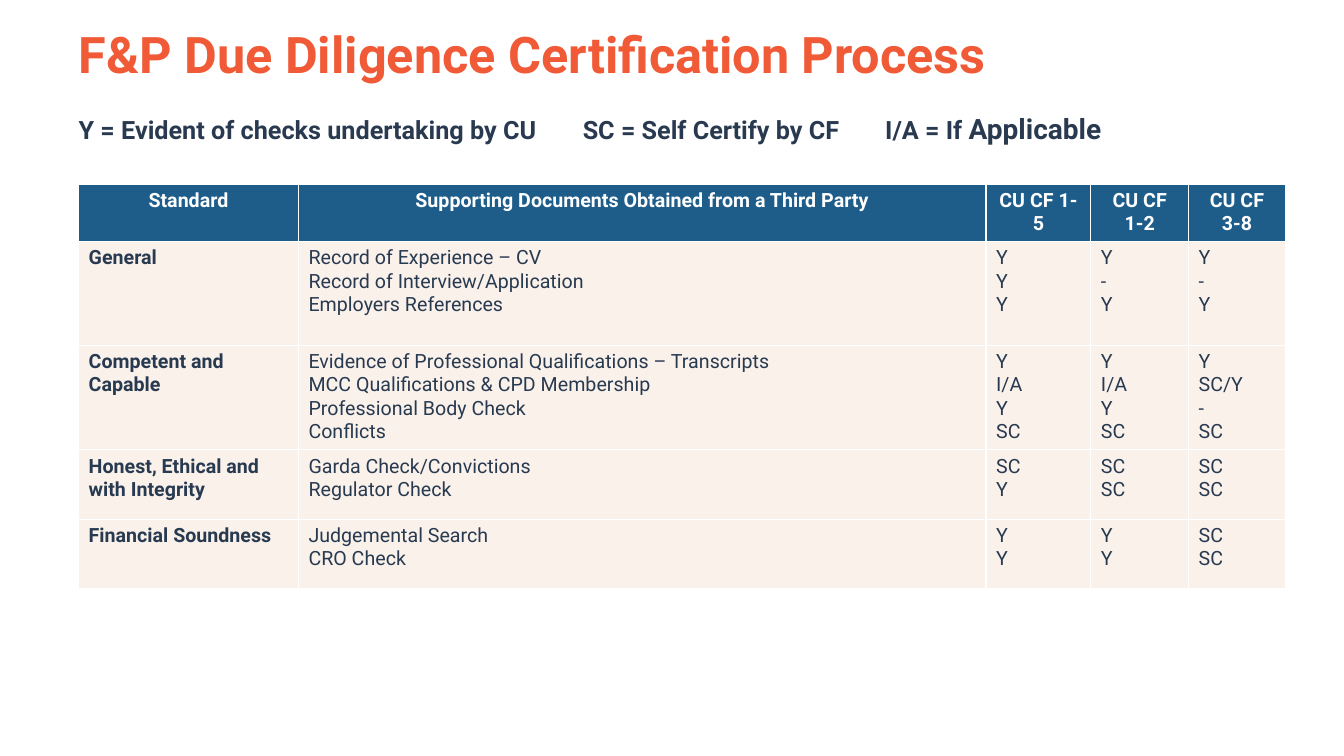
"""Build the due diligence certification slide."""
from dataclasses import dataclass

from lxml.etree import SubElement
from pptx import Presentation
from pptx.dml.color import RGBColor
from pptx.enum.text import MSO_ANCHOR, MSO_AUTO_SIZE, PP_ALIGN
from pptx.oxml.ns import qn
from pptx.util import Inches, Pt

TITLE = "F&P Due Diligence Certification Process"
LEGEND = (
    ("Y = Evident of checks undertaking by CU\tSC = Self Certify by CF\tI/A = If ", 18),
    ("Applicable", 20),
)
HEADINGS = ("Standard", "Supporting Documents Obtained from a Third Party",
            "CU CF 1-5", "CU CF\n1-2", "CU CF\n3-8")
STANDARDS = (
    ("General", (
        ("Record of Experience – CV", "Y", "Y", "Y"),
        ("Record of Interview/Application", "Y", "-", "-"),
        ("Employers References", "Y", "Y", "Y"),
    )),
    ("Competent and Capable", (
        ("Evidence of Professional Qualifications – Transcripts", "Y", "Y", "Y"),
        ("MCC Qualifications & CPD Membership", "I/A", "I/A", "SC/Y"),
        ("Professional Body Check", "Y", "Y", "-"),
        ("Conflicts", "SC", "SC", "SC"),
    )),
    ("Honest, Ethical and with Integrity", (
        ("Garda Check/Convictions", "SC", "SC", "SC"),
        ("Regulator Check", "Y", "SC", "SC"),
    )),
    ("Financial Soundness", (
        ("Judgemental Search", "Y", "Y", "SC"),
        ("CRO Check", "Y", "Y", "SC"),
    )),
)

SLIDE_SIZE = (13.33, 7.5)
MARGIN, CONTENT_WIDTH = 0.78, 11.98
TITLE_TOP, TITLE_HEIGHT = 0.3, 0.77
LEGEND_TOP, LEGEND_HEIGHT, LEGEND_STOPS = 1.06, 0.44, (5, 8)
TABLE_TOP = 1.83
COLUMNS = (2.18, 6.82, 1.04, 0.97, 0.96)
ROWS = (0.56, 1.03, 1.03, 0.69, 0.69)


@dataclass(frozen=True)
class Theme:
    """Colours and type of the slide."""
    font: str = "Roboto"
    title: str = "F05A36"
    legend: str = "293A50"
    body: str = "283A50"
    header: str = "1E5D8A"
    header_text: str = "FFFFFF"
    cell: str = "FAF1EB"
    title_size: int = 36
    table_size: int = 14


THEME = Theme()


def style(font, size, colour, bold):
    """Apply the theme font with the given size, colour and weight."""
    font.name, font.size, font.bold = THEME.font, Pt(size), bold
    font.color.rgb = RGBColor.from_string(colour)


def place(shape, top, height):
    """Set a shape on the content column."""
    shape.left, shape.top = Inches(MARGIN), Inches(top)
    shape.width, shape.height = Inches(CONTENT_WIDTH), Inches(height)


def add_title(slide):
    """Fill the title placeholder."""
    title = slide.shapes.title
    place(title, TITLE_TOP, TITLE_HEIGHT)
    frame = title.text_frame
    frame.text = TITLE
    frame.auto_size, frame.vertical_anchor = MSO_AUTO_SIZE.NONE, MSO_ANCHOR.TOP
    frame.margin_left = frame.margin_right = frame.margin_top = frame.margin_bottom = 0
    heading = frame.paragraphs[0]
    heading.alignment, heading.line_spacing = PP_ALIGN.LEFT, 0.9
    style(heading.font, THEME.title_size, THEME.title, True)


def add_legend(slide):
    """Write the key to the codes on tab stops."""
    legend = slide.shapes.add_textbox(0, 0, 0, 0)
    place(legend, LEGEND_TOP, LEGEND_HEIGHT)
    frame = legend.text_frame
    frame.word_wrap, frame.margin_left = True, 0
    line = frame.paragraphs[0]
    stops = SubElement(line._p.get_or_add_pPr(), qn("a:tabLst"))
    for stop in LEGEND_STOPS:
        SubElement(stops, qn("a:tab"), pos=str(Inches(stop)), algn="l")
    for wording, size in LEGEND:
        run = line.add_run()
        run.text = wording
        style(run.font, size, THEME.legend, True)


def add_standards(slide):
    """Add the table of standards and checks."""
    table = slide.shapes.add_table(
        len(ROWS), len(COLUMNS), Inches(MARGIN), Inches(TABLE_TOP),
        Inches(sum(COLUMNS)), Inches(sum(ROWS))).table
    table.horz_banding = False
    for column, width in zip(table.columns, COLUMNS):
        column.width = Inches(width)
    for row, height in zip(table.rows, ROWS):
        row.height = Inches(height)
    contents = [HEADINGS] + [
        (standard, *("\n".join(entries) for entries in zip(*checks)))
        for standard, checks in STANDARDS]
    for row_index, wordings in enumerate(contents):
        is_header = row_index == 0
        for column_index, wording in enumerate(wordings):
            cell = table.cell(row_index, column_index)
            cell.fill.solid()
            cell.fill.fore_color.rgb = RGBColor.from_string(
                THEME.header if is_header else THEME.cell)
            cell.text = wording
            for line in cell.text_frame.paragraphs:
                line.alignment = PP_ALIGN.CENTER if is_header else PP_ALIGN.LEFT
                style(line.font, THEME.table_size,
                      THEME.header_text if is_header else THEME.body,
                      is_header or column_index == 0)


def main():
    """Assemble and save the slide."""
    deck = Presentation()
    deck.slide_width, deck.slide_height = map(Inches, SLIDE_SIZE)
    slide = deck.slides.add_slide(deck.slide_layouts.get_by_name("Title Only"))
    add_title(slide)
    add_legend(slide)
    add_standards(slide)
    deck.save("out.pptx")


if __name__ == "__main__":
    main()
